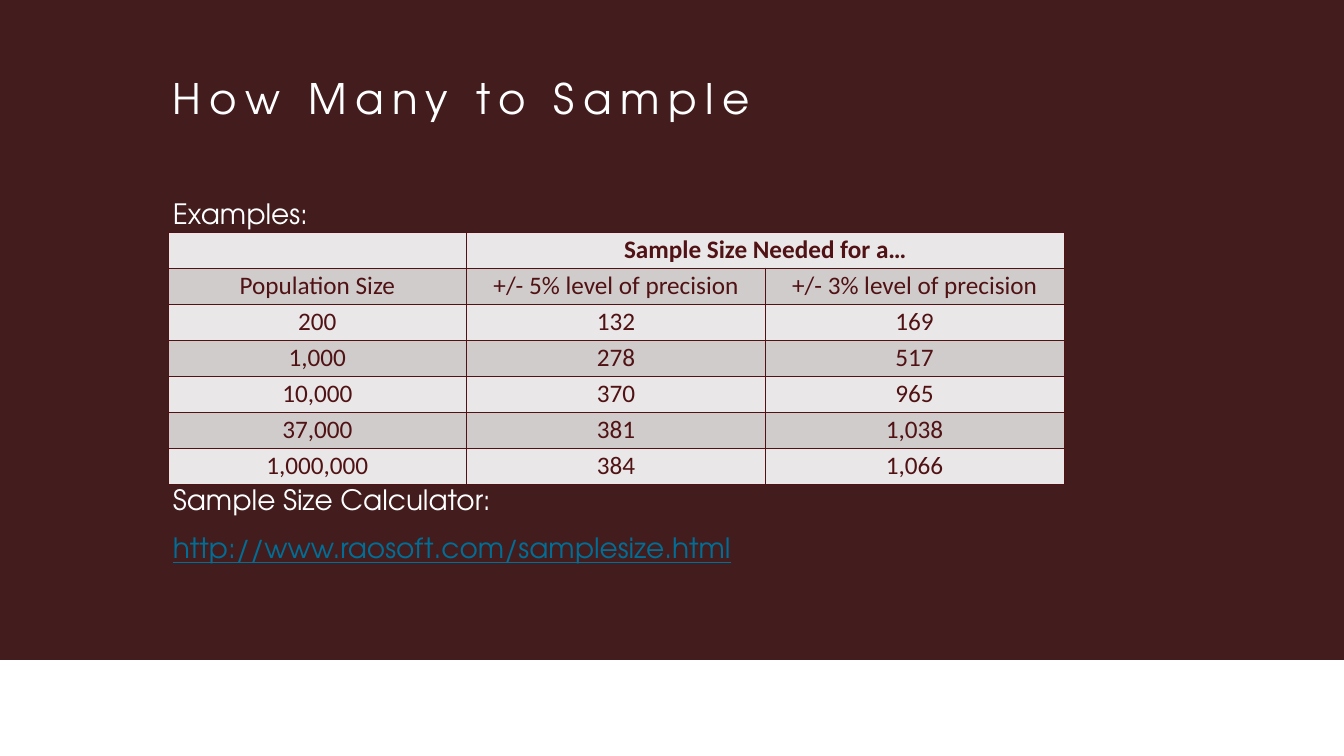
from lxml import etree
from pptx import Presentation
from pptx.dml.color import RGBColor
from pptx.enum.shapes import MSO_SHAPE
from pptx.enum.text import MSO_ANCHOR, PP_ALIGN
from pptx.oxml.ns import qn
from pptx.util import Emu, Pt

RECTANGLE = MSO_SHAPE.RECTANGLE
TOP, MIDDLE = MSO_ANCHOR.TOP, MSO_ANCHOR.MIDDLE
CENTER = PP_ALIGN.CENTER

# Content
TITLE = "How Many to Sample"
EXAMPLES = "Examples:"
CALCULATOR = "Sample Size Calculator:"
CALCULATOR_URL = "http://www.raosoft.com/samplesize.html"
SAMPLE_SIZES = [
    ("", "Sample Size Needed for a…", ""),
    ("Population Size", "+/- 5% level of precision", "+/- 3% level of precision"),
    ("200", "132", "169"),
    ("1,000", "278", "517"),
    ("10,000", "370", "965"),
    ("37,000", "381", "1,038"),
    ("1,000,000", "384", "1,066"),
]

# Formats
HEADING_FONT, TABLE_FONT = "TeX Gyre Adventor", "Calibri"
WHITE, MAROON, LINK_BLUE, TABLE_INK = "FFFFFF", "431C1D", "006E96", "501214"
ROW_FILLS = ("E9E7E7", "D0CCCC")
TITLE_FORMAT = {"name": HEADING_FONT, "size": Pt(60)}
BODY_FORMAT = {"name": HEADING_FONT, "size": Pt(40)}
LINK_FORMAT = {**BODY_FORMAT, "underline": True}
CELL_FORMAT = {"name": TABLE_FONT, "size": Pt(36), "bold": False}
HEAD_FORMAT = {**CELL_FORMAT, "bold": True}

# Layout in px
SLIDE_W, SLIDE_H, BAND_H = 1344, 756, 660
LEFT, TEXT_W = 168, 1008
TITLE_Y, EXAMPLES_Y, TABLE_Y, CALCULATOR_Y = 76, 194, 232, 480
TABLE_W, ROW_H = 896, 36


def px(value):
    return Emu(round(value * 914400 / 50.4))


def color(hex_value):
    return RGBColor.from_string(hex_value)


def write(paragraph, text, formats, ink):
    run = paragraph.add_run()
    run.text = text
    for key, value in formats.items():
        setattr(run.font, key, value)
    run.font.color.rgb = color(ink)
    return run


def add_text(slide, y, height, lines):
    frame = slide.shapes.add_textbox(px(LEFT), px(y), px(TEXT_W), px(height)).text_frame
    frame.word_wrap = True
    frame.vertical_anchor = TOP
    for index, (text, formats, ink) in enumerate(lines):
        paragraph = frame.add_paragraph() if index else frame.paragraphs[0]
        if index:
            paragraph.space_before = Pt(20)
        write(paragraph, text, formats, ink)
    return frame


def set_borders(cell, ink):
    properties = cell._tc.get_or_add_tcPr()
    for index, side in enumerate(("a:lnL", "a:lnR", "a:lnT", "a:lnB")):
        line = etree.Element(qn(side), w=str(Pt(1)))
        fill = etree.SubElement(line, qn("a:solidFill"))
        etree.SubElement(fill, qn("a:srgbClr"), val=ink)
        properties.insert(index, line)


def add_sample_table(slide):
    rows, columns = len(SAMPLE_SIZES), len(SAMPLE_SIZES[0])
    table = slide.shapes.add_table(
        rows, columns, px(LEFT), px(TABLE_Y), px(TABLE_W), px(ROW_H * rows)
    ).table
    for column in table.columns:
        column.width = px(TABLE_W / columns)
    table.cell(0, 1).merge(table.cell(0, columns - 1))
    for r, values in enumerate(SAMPLE_SIZES):
        table.rows[r].height = px(ROW_H)
        for c, value in enumerate(values):
            cell = table.cell(r, c)
            cell.fill.solid()
            cell.fill.fore_color.rgb = color(ROW_FILLS[r % 2])
            cell.vertical_anchor = MIDDLE
            set_borders(cell, TABLE_INK)
            if value:
                paragraph = cell.text_frame.paragraphs[0]
                paragraph.alignment = CENTER
                write(paragraph, value, CELL_FORMAT if r else HEAD_FORMAT, TABLE_INK)


def main():
    deck = Presentation()
    deck.slide_width, deck.slide_height = px(SLIDE_W), px(SLIDE_H)
    slide = deck.slides.add_slide(deck.slide_layouts[6])

    # Dark band behind the content
    band = slide.shapes.add_shape(RECTANGLE, 0, 0, px(SLIDE_W), px(BAND_H))
    band.shadow.inherit = False
    band.fill.solid()
    band.fill.fore_color.rgb = color(MAROON)
    band.line.fill.background()

    # Title with wide letter spacing
    title = add_text(slide, TITLE_Y, 63, [(TITLE, TITLE_FORMAT, WHITE)]).paragraphs[0]
    title.line_spacing = 0.9
    title.runs[0].font._element.set("spc", "1200")

    # Text above and below the table
    add_text(slide, EXAMPLES_Y, 40, [(EXAMPLES, BODY_FORMAT, WHITE)])
    add_text(slide, CALCULATOR_Y, 90, [
        (CALCULATOR, BODY_FORMAT, WHITE),
        (CALCULATOR_URL, LINK_FORMAT, LINK_BLUE),
    ])

    add_sample_table(slide)
    deck.save("out.pptx")


if __name__ == "__main__":
    main()
